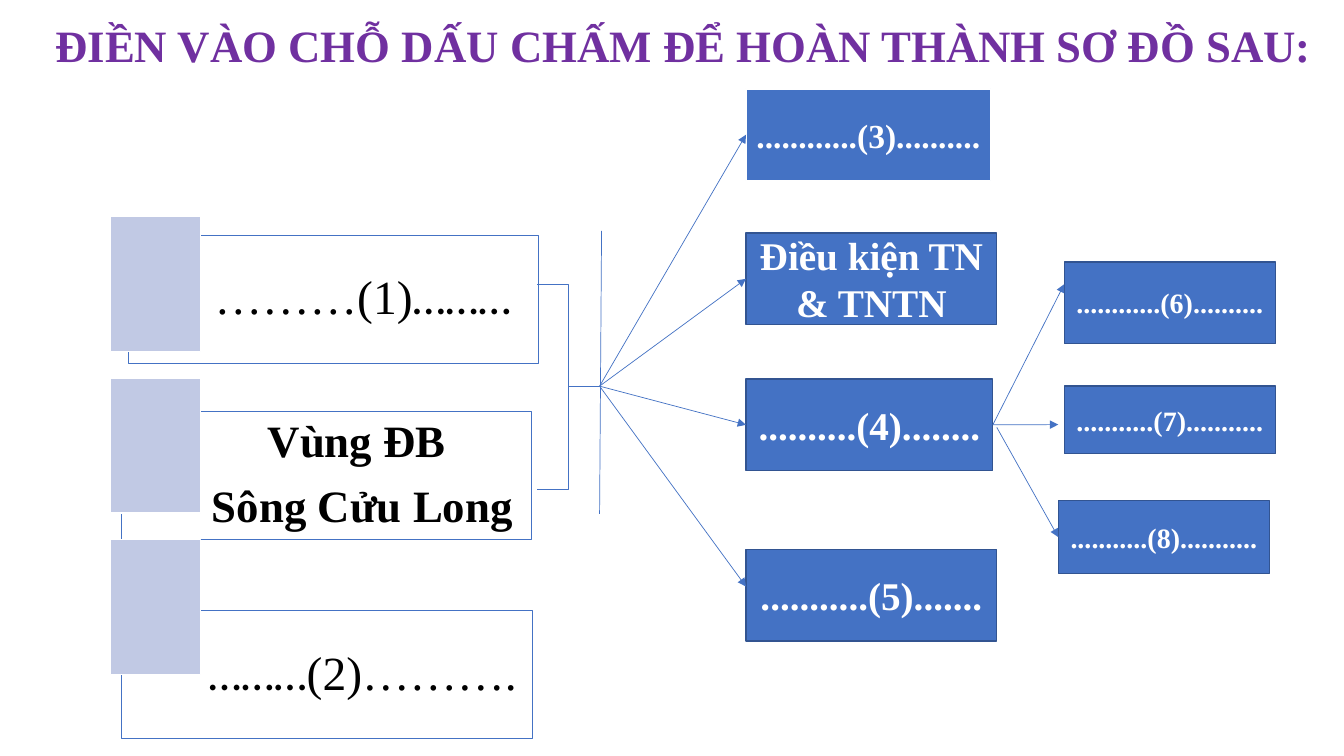
import dataclasses

import lxml.etree
import pptx
import pptx.dml.color
import pptx.enum.shapes
import pptx.enum.text
import pptx.oxml.ns
import pptx.util

Cm = pptx.util.Cm
Pt = pptx.util.Pt
RGB = pptx.dml.color.RGBColor.from_string
RECTANGLE = pptx.enum.shapes.MSO_SHAPE.RECTANGLE
LEFT = pptx.enum.text.PP_ALIGN.LEFT
CENTER = pptx.enum.text.PP_ALIGN.CENTER
MIDDLE = pptx.enum.text.MSO_ANCHOR.MIDDLE


@dataclasses.dataclass
class Theme:
    serif: str = "Times New Roman"
    sans: str = "Calibri"
    blue: str = "4472C4"
    navy: str = "325491"
    lavender: str = "C1C9E4"
    purple: str = "7030A0"
    white: str = "FFFFFF"
    black: str = "000000"
    heading: int = 32
    blank: int = 34
    region: int = 32
    factor: int = 28
    first_factor: int = 24
    detail: int = 20
    thin: float = 0.5
    edge: float = 1


theme = Theme()
deck = pptx.Presentation()
deck.slide_width = Cm(33.87)
deck.slide_height = Cm(19.05)
slide = deck.slides.add_slide(deck.slide_layouts[5])


def write(shape, paragraphs, size, color, bold, align):
    frame = shape.text_frame
    frame.word_wrap = True
    frame.vertical_anchor = MIDDLE
    for index, pieces in enumerate(paragraphs):
        line = frame.add_paragraph() if index else frame.paragraphs[0]
        line.alignment = align
        if index:
            line.space_before = Pt(12)
        for words, font in pieces:
            run = line.add_run()
            run.text = words
            run.font.name = font
            run.font.size = Pt(size)
            run.font.bold = bold
            run.font.color.rgb = RGB(color)


def connect(x1, y1, x2, y2, start=None, end=None, arrow=True):
    link = slide.shapes.add_connector(
        pptx.enum.shapes.MSO_CONNECTOR.STRAIGHT, Cm(x1), Cm(y1), Cm(x2), Cm(y2))
    if start is not None:
        link.begin_connect(start, 3)
    if end is not None:
        link.end_connect(end, 1)
    link.line.color.rgb = RGB(theme.blue)
    link.line.width = Pt(theme.thin)
    if arrow:
        head = lxml.etree.SubElement(link.line._get_or_add_ln(), pptx.oxml.ns.qn("a:tailEnd"))
        head.set("type", "triangle")
    lxml.etree.SubElement(link._element.spPr, pptx.oxml.ns.qn("a:effectLst"))


heading = slide.shapes.title
heading.left, heading.top, heading.width, heading.height = Cm(1.14), Cm(0.3), Cm(32.26), Cm(1.63)
heading.text_frame.auto_size = pptx.enum.text.MSO_AUTO_SIZE.NONE
write(heading, [[("ĐIỀN VÀO CHỖ DẤU CHẤM ĐỂ HOÀN THÀNH SƠ ĐỒ SAU:", theme.serif)]],
      theme.heading, theme.purple, True, LEFT)

regions = [
    (3.23, 5.92, [[("………(1)", theme.serif), ("………", theme.sans)]], theme.blank, False, LEFT),
    (3.05, 10.36, [[("Vùng ĐB ", theme.serif)], [("Sông Cửu Long", theme.serif)]],
     theme.region, True, CENTER),
    (3.07, 15.39, [[("………", theme.sans), ("(2)……….", theme.serif)]], theme.blank, False, LEFT),
]
for row, (left, top, paragraphs, size, bold, align) in enumerate(regions):
    panel = slide.shapes.add_shape(RECTANGLE, Cm(left), Cm(top), Cm(10.34), Cm(3.23))
    panel.shadow.inherit = False
    panel.fill.solid()
    panel.fill.fore_color.rgb = RGB(theme.white)
    panel.line.color.rgb = RGB(theme.blue)
    panel.line.width = Pt(theme.thin)
    write(panel, paragraphs, size, theme.black, bold, align)
    frame = panel.text_frame
    frame.margin_left = Cm(2.18)
    frame.margin_right = frame.margin_top = frame.margin_bottom = Cm(0.35)
    for line in frame.paragraphs:
        line.line_spacing = 0.9

    marker = slide.shapes.add_shape(RECTANGLE, Cm(2.79), Cm(5.46 + 4.07 * row), Cm(2.26), Cm(3.4))
    marker.shadow.inherit = False
    marker.fill.solid()
    marker.fill.fore_color.rgb = RGB(theme.lavender)
    marker.line.color.rgb = RGB(theme.white)
    marker.line.width = Pt(theme.edge)

brace = slide.shapes.add_shape(
    pptx.enum.shapes.MSO_SHAPE.RIGHT_BRACE, Cm(13.54), Cm(7.16), Cm(1.57), Cm(5.16))
brace.adjustments[0] = 0
brace.adjustments[1] = 0.5
brace.shadow.inherit = False
brace.fill.background()
brace.line.color.rgb = RGB(theme.blue)
brace.line.width = Pt(theme.thin)

boxes = {}
for words, left, top, width, height, size, edge in [
    ("............(3)..........", 18.8, 2.24, 6.17, 2.31, theme.first_factor, theme.white),
    ("Điều kiện TN & TNTN", 18.8, 5.87, 6.32, 2.31, theme.factor, theme.navy),
    ("..........(4)........", 18.8, 9.55, 6.22, 2.31, theme.factor, theme.navy),
    ("...........(5).......", 18.8, 13.84, 6.32, 2.31, theme.factor, theme.navy),
    ("............(6)..........", 26.82, 6.6, 5.33, 2.06, theme.detail, theme.navy),
    ("...........(7)...........", 26.82, 9.73, 5.33, 1.7, theme.detail, theme.navy),
    ("...........(8)...........", 26.67, 12.62, 5.33, 1.83, theme.detail, theme.navy),
]:
    box = slide.shapes.add_shape(RECTANGLE, Cm(left), Cm(top), Cm(width), Cm(height))
    box.shadow.inherit = False
    box.fill.solid()
    box.fill.fore_color.rgb = RGB(theme.blue)
    box.line.color.rgb = RGB(edge)
    box.line.width = Pt(theme.edge)
    write(box, [[(words, theme.serif)]], size, theme.white, True, CENTER)
    boxes[words.strip(".")] = box

connect(15.16, 5.82, 15.11, 12.95, arrow=False)
for y, factor in [(3.39, boxes["(3)"]), (7.02, boxes["Điều kiện TN & TNTN"]),
                  (10.7, boxes["(4)"]), (14.78, None)]:
    connect(15.11, 9.73, 18.8, y, end=factor)

connect(25.02, 10.7, 26.82, 7.16, start=boxes["(4)"])
connect(25.02, 10.7, 26.67, 10.7, start=boxes["(4)"])
connect(25.12, 10.77, 26.67, 13.54, end=boxes["(8)"])

deck.save("out.pptx")
